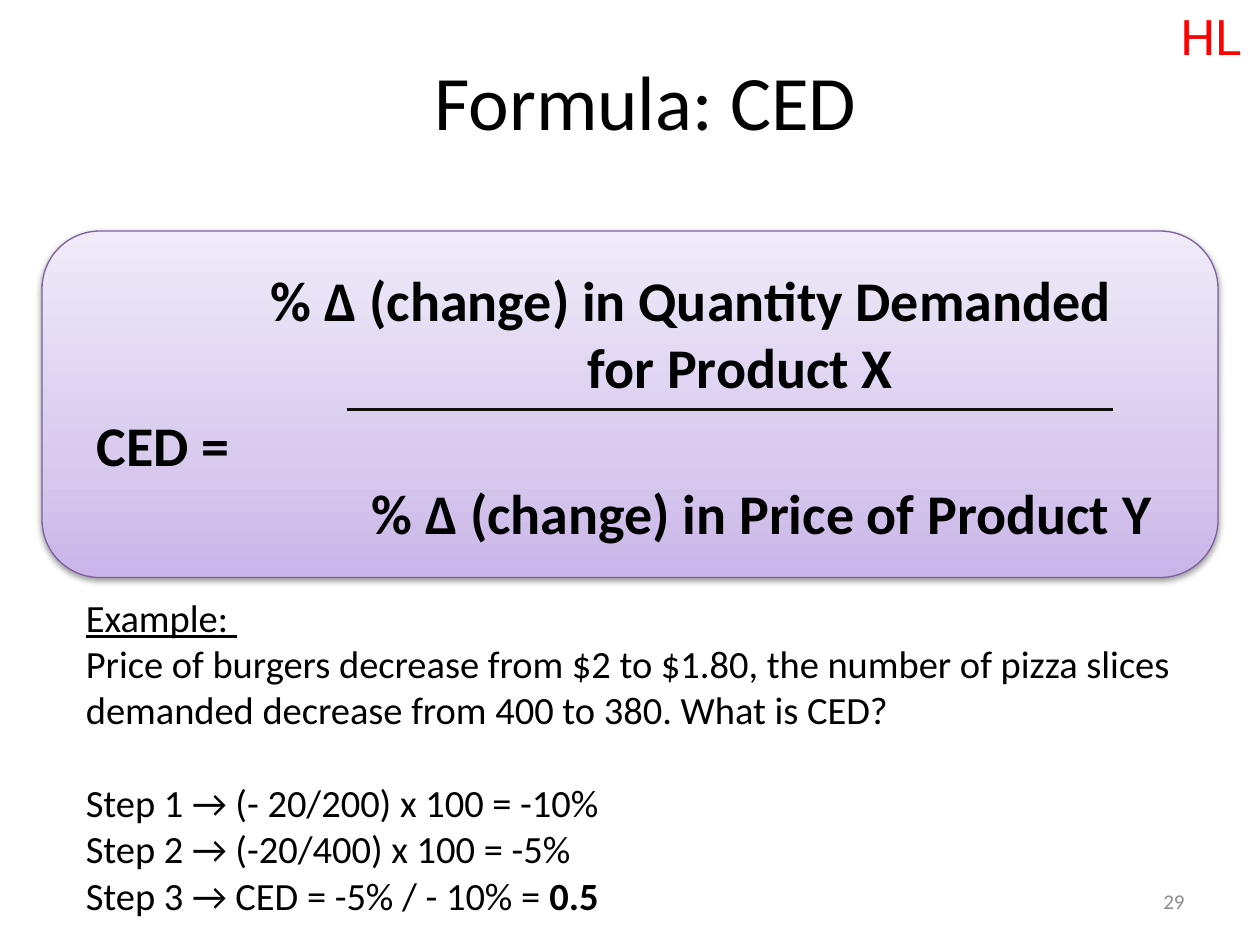
from copy import deepcopy
from lxml import etree
from pptx import Presentation
from pptx.dml.color import RGBColor
from pptx.enum.shapes import MSO_CONNECTOR as Link, MSO_SHAPE as Preset
from pptx.enum.text import MSO_ANCHOR as Anchor, PP_ALIGN as Align
from pptx.oxml import parse_xml
from pptx.oxml.ns import nsdecls, qn
from pptx.util import Pt

BLACK = RGBColor(0, 0, 0)
RED = RGBColor(0xFF, 0, 0)
GREY = RGBColor(0x8C, 0x8C, 0x8C)
BAR = RGBColor(0x0D, 0x0D, 0x0D)
PURPLE = RGBColor(0x7D, 0x60, 0xA0)
LILACS = [
    (0, RGBColor(0xC9, 0xB5, 0xE8)),
    (0.35, RGBColor(0xD8, 0xCB, 0xEE)),
    (1, RGBColor(0xF0, 0xEA, 0xF9)),
]

FORMULA = [
    ("% ∆ (change) in Quantity Demanded", 99.5, 0),
    ("for Product X", 280.5, 0),
    ("CED =", 0, 6.4),
    ("% ∆ (change) in Price of Product Y", 157, 0),
]
EXAMPLE = [
    ([("Example: ", {"underline": True})], 0),
    ([("Price of burgers decrease from $2 to $1.80, the number of pizza slices "
       "demanded decrease from 400 to 380. What is CED?", {})], 0),
    ([("Step 1 → (- 20/200) x 100 = -10%", {})], 26.6),
    ([("Step 2 → (-20/400) x 100 = -5%", {})], 0),
    ([("Step 3 → CED = -5% / - 10% = ", {}), ("0.5", {"bold": True})], 0),
]


def style(font, color=BLACK, **values):
    font.color.rgb = color
    for name, value in ({"name": "Calibri"} | values).items():
        setattr(font, name, value)


def place(shape, box):
    for side, length in zip(("left", "top", "width", "height"), box):
        setattr(shape, side, Pt(length))


def text_frame(slide, box, anchor=Anchor.TOP):
    frame = slide.shapes.add_textbox(*map(Pt, box)).text_frame
    frame.word_wrap = True
    frame.vertical_anchor = anchor
    return frame


def next_paragraph(frame, index):
    return frame.add_paragraph() if index else frame.paragraphs[0]


def add_title(slide, box):
    title = slide.shapes.title
    place(title, box)
    title.text_frame.text = "Formula: CED"
    title.text_frame.vertical_anchor = Anchor.MIDDLE
    heading = title.text_frame.paragraphs[0]
    heading.alignment = Align.CENTER
    style(heading.runs[0].font, size=Pt(44))


def add_panel(slide, box):
    panel = slide.shapes.add_shape(Preset.ROUNDED_RECTANGLE, *map(Pt, box))
    panel.line.color.rgb = PURPLE
    panel.line.width = Pt(0.75)
    panel.fill.gradient()
    panel.fill.gradient_angle = 90
    stops = panel.element.spPr.find(qn("a:gradFill")).find(qn("a:gsLst"))
    stops.append(deepcopy(stops[-1]))
    for stop, (position, color) in zip(panel.fill.gradient_stops, LILACS):
        stop.position = position
        stop.color.rgb = color
    panel.shadow.inherit = False
    effects = panel.element.spPr.find(qn("a:effectLst"))
    effects.append(parse_xml(
        f'<a:outerShdw {nsdecls("a")} blurRad="{Pt(3.1)}" dist="{Pt(1.6)}" '
        'dir="5400000" rotWithShape="0"><a:srgbClr val="000000">'
        '<a:alpha val="38000"/></a:srgbClr></a:outerShdw>'))


def add_formula(slide, box):
    left, top, width, height = box
    add_panel(slide, box)
    frame = text_frame(slide, (left + 24.24, top + 16, width - 30, height - 32))
    for index, (part, indent, gap) in enumerate(FORMULA):
        line = next_paragraph(frame, index)
        line.space_before = Pt(gap)
        line._p.get_or_add_pPr().set("marL", str(Pt(indent)))
        run = line.add_run()
        run.text = part
        style(run.font, size=Pt(32), bold=True)
    bar_y = Pt(top + 102)
    bar = slide.shapes.add_connector(
        Link.STRAIGHT, Pt(left + 174), bar_y, Pt(left + 612), bar_y)
    bar.line.color.rgb = BAR
    bar.line.width = Pt(2.25)
    etree.SubElement(bar.element.spPr, qn("a:effectLst"))


def add_example(slide, box):
    frame = text_frame(slide, box)
    for index, (parts, gap) in enumerate(EXAMPLE):
        line = next_paragraph(frame, index)
        line.space_before = Pt(gap)
        for words, emphasis in parts:
            run = line.add_run()
            run.text = words
            style(run.font, size=Pt(22), **emphasis)


def add_label(slide, box, words, alignment, anchor, **look):
    line = text_frame(slide, box, anchor).paragraphs[0]
    line.alignment = alignment
    run = line.add_run()
    run.text = words
    style(run.font, **look)


def main():
    deck = Presentation()
    deck.slide_width, deck.slide_height = Pt(720), Pt(540)
    slide = deck.slides.add_slide(deck.slide_layouts[5])
    add_title(slide, (48, 18, 642, 78))
    add_formula(slide, (24, 132, 672, 198))
    add_example(slide, (42, 336, 648, 194))
    add_label(slide, (516, 500.4, 168, 28.8), "29", Align.RIGHT, Anchor.MIDDLE,
              color=GREY, size=Pt(12))
    add_label(slide, (664, 0, 56, 41), "HL", Align.CENTER, Anchor.TOP,
              color=RED, size=Pt(28), name="Roboto")
    deck.save("out.pptx")


if __name__ == "__main__":
    main()
